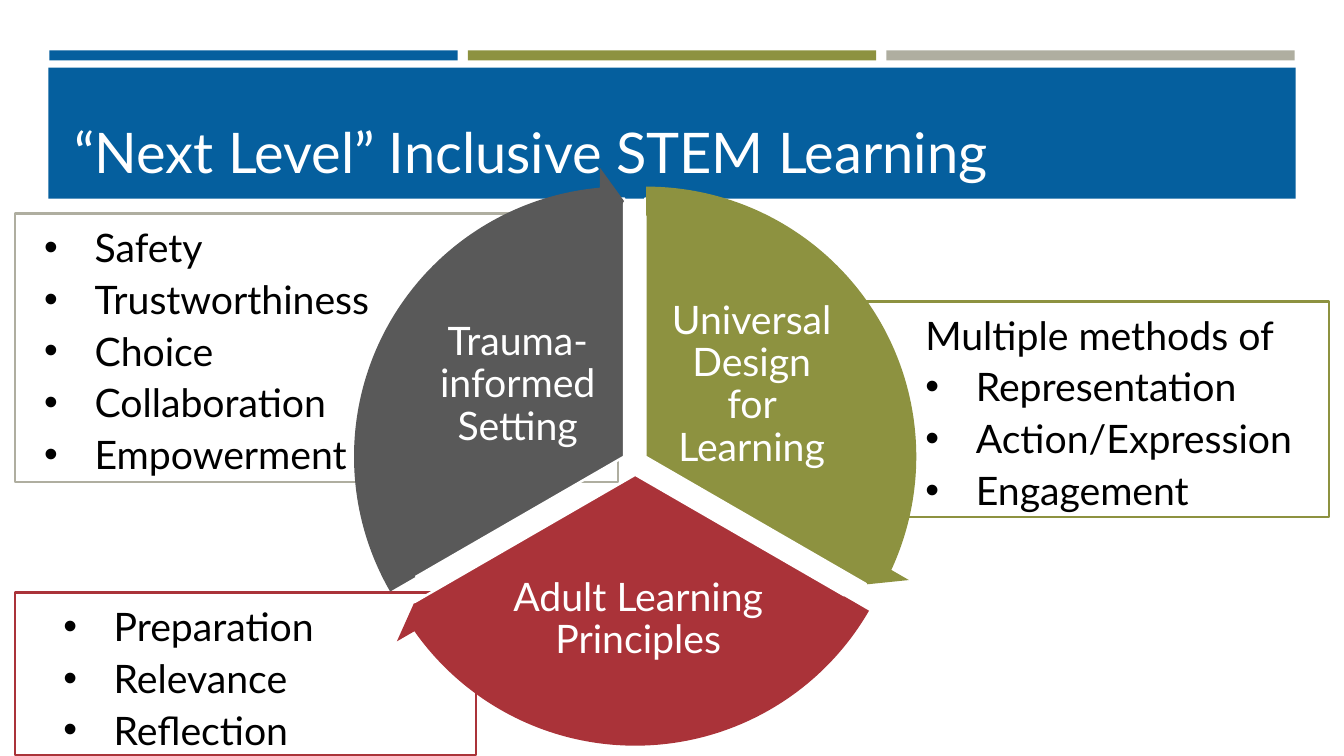
from lxml import etree
from pptx import Presentation
from pptx.dml.color import RGBColor
from pptx.enum.shapes import MSO_SHAPE
from pptx.enum.text import MSO_ANCHOR, MSO_AUTO_SIZE, PP_ALIGN
from pptx.oxml.ns import qn
from pptx.util import Inches, Pt

COLORS = {
    "blue": "055F9E",
    "olive": "8D9240",
    "stone": "AFAEA0",
    "red": "AA3339",
    "gray": "595959",
    "white": "FFFFFF",
    "black": "000000",
}


def add_block(kind, place, fill, line=None, angles=()):
    block = page.shapes.add_shape(kind, *[Inches(value) for value in place])
    block.shadow.inherit = False
    block.fill.solid()
    block.fill.fore_color.rgb = RGBColor.from_string(COLORS[fill])
    if line:
        block.line.color.rgb = RGBColor.from_string(COLORS[line])
        block.line.width = Pt(1.75)
    else:
        block.line.fill.background()
    for index, angle in enumerate(angles):
        block.adjustments[index] = angle
    return block


def add_span(para, text, size, color):
    span = para.add_run()
    span.text = text
    span.font.name = "Lato"
    span.font.size = Pt(size)
    span.font.color.rgb = RGBColor.from_string(COLORS[color])


deck = Presentation()
deck.slide_width = Inches(13.33)
deck.slide_height = Inches(7.5)
page = deck.slides.add_slide(deck.slide_layouts[6])

for column, color in enumerate(["blue", "olive", "stone"]):
    add_block(MSO_SHAPE.RECTANGLE, (0.49 + 4.15 * column, 0.5, 4.05, 0.1), color)
add_block(MSO_SHAPE.RECTANGLE, (0.48, 0.67, 12.37, 1.3), "blue")

panels = [
    ((8.46, 2.99, 4.72, 2.14), "olive", 1.12, "Multiple methods of",
     ["Representation", "Action/Expression", "Engagement"]),
    ((0.15, 5.88, 4.57, 1.61), "red", 0.88, None,
     ["Preparation", "Relevance", "Reflection"]),
    ((0.15, 2.12, 5.98, 2.66), "stone", 0.69, None,
     ["Safety", "Trustworthiness", "Choice", "Collaboration", "Empowerment"]),
]
for place, color, indent, heading, items in panels:
    frame = add_block(MSO_SHAPE.RECTANGLE, place, "white", color).text_frame
    frame.word_wrap = True
    frame.auto_size = MSO_AUTO_SIZE.SHAPE_TO_FIT_TEXT
    frame.vertical_anchor = MSO_ANCHOR.TOP
    lines = [heading] + items if heading else items
    for index, text in enumerate(lines):
        para = frame.add_paragraph() if index else frame.paragraphs[0]
        para.alignment = PP_ALIGN.LEFT
        para.line_spacing = 1.1
        add_span(para, text, 28, "black")
        settings = para._p.get_or_add_pPr()
        if text == heading:
            settings.set("marL", str(Inches(indent - 0.5)))
        else:
            settings.set("marL", str(Inches(indent)))
            settings.set("indent", str(Inches(-0.5)))
            etree.SubElement(settings, qn("a:buFont")).set("typeface", "Arial")
            etree.SubElement(settings, qn("a:buChar")).set("char", "•")

title = page.shapes.add_textbox(Inches(0.64), Inches(0.77), Inches(12.06), Inches(1.11))
title.text_frame.word_wrap = True
title.text_frame.vertical_anchor = MSO_ANCHOR.BOTTOM
add_span(title.text_frame.paragraphs[0], "“Next Level” Inclusive STEM Learning", 40, "white")

sectors = [
    ("olive", (3.84, 1.97), (162, 18), "Universal Design for Learning",
     (6.54, 3.06, 1.83, 1.52), (3.53, 1.65), (14.72, 161.99)),
    ("red", (3.74, 2.15), (18, 90), "Adult Learning Principles",
     (4.96, 5.48, 2.74, 1.34), (3.42, 1.84), (86.72, 18)),
    ("gray", (3.63, 1.97), (90, 162), "Trauma-informed Setting",
     (4.22, 3.06, 1.83, 1.52), (3.31, 1.65), (158.73, 90)),
]
for color, corner, angles, text, label_place, _, _ in sectors:
    add_block(MSO_SHAPE.PIE, (*corner, 5.12, 5.12), color, "white", angles)
    label = page.shapes.add_textbox(*[Inches(value) for value in label_place])
    frame = label.text_frame
    frame.word_wrap = True
    frame.vertical_anchor = MSO_ANCHOR.MIDDLE
    frame.margin_left = frame.margin_right = Inches(0.06)
    frame.margin_top = frame.margin_bottom = Inches(0.04)
    para = frame.paragraphs[0]
    para.alignment = PP_ALIGN.CENTER
    para.line_spacing = 0.9
    add_span(para, text, 28, "white")

for color, _, _, _, _, corner, (end, start) in sectors:
    add_block(MSO_SHAPE.CIRCULAR_ARROW, (*corner, 5.76, 5.76), color,
              angles=(0.05, 3.28, end, start, 0.06))

deck.save("out.pptx")
